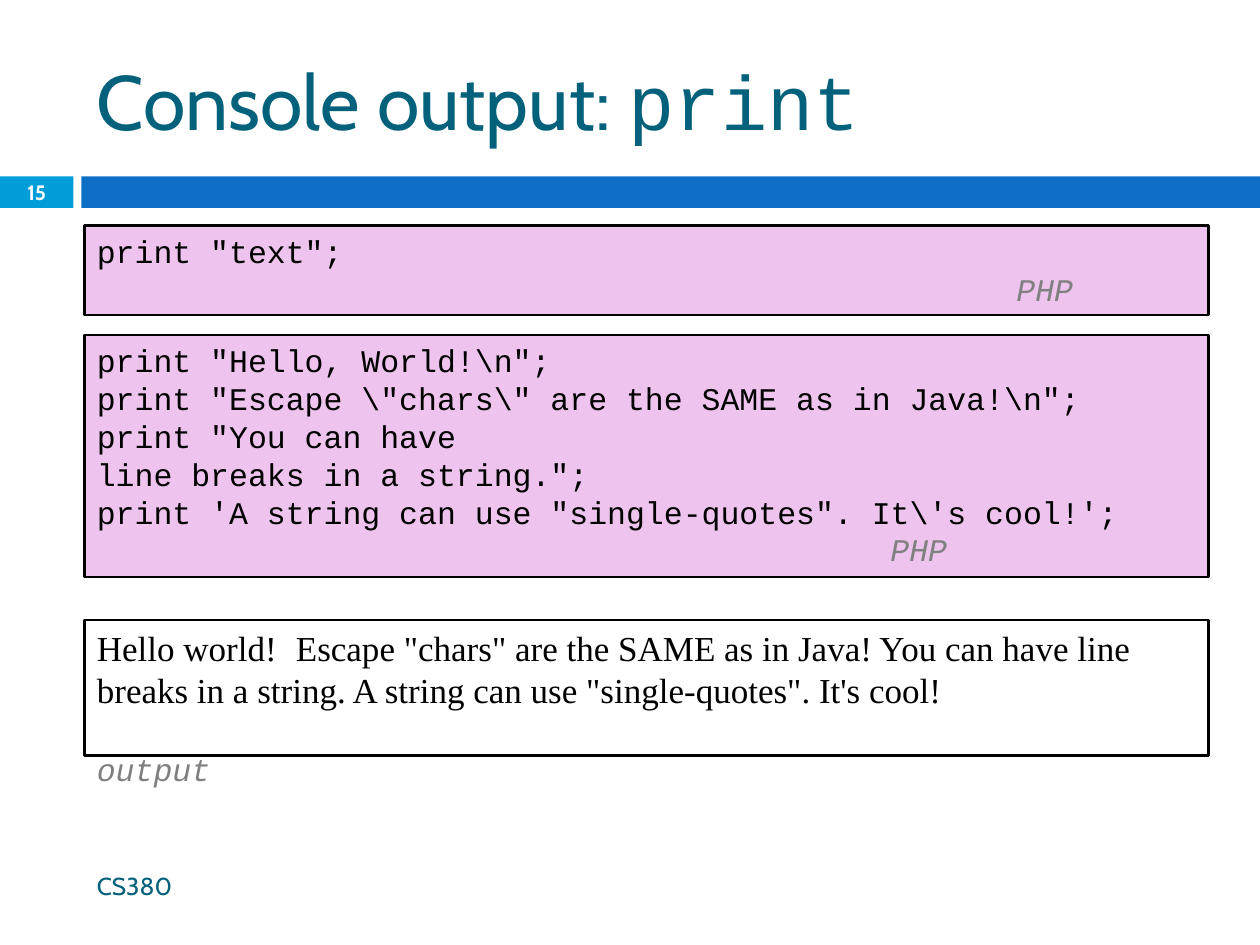
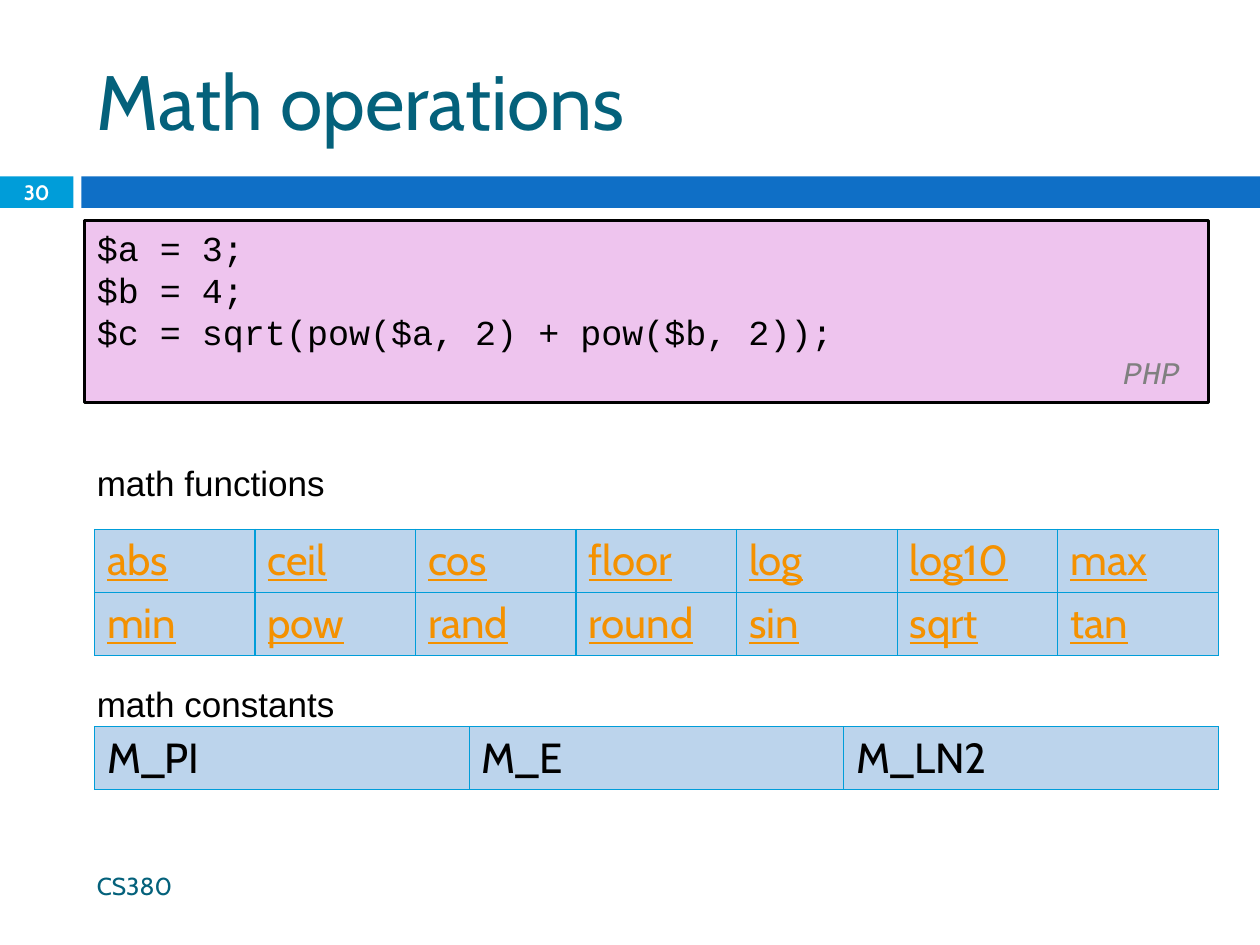
from lxml import etree
from pptx import Presentation
from pptx.dml.color import RGBColor
from pptx.enum import shapes, text
from pptx.oxml import ns
from pptx.util import Pt

# Shared look
TEAL = RGBColor(0x04, 0x61, 0x7B)
CYAN = RGBColor(0x00, 0x9D, 0xD9)
BLUE = RGBColor(0x0F, 0x6F, 0xC6)
PINK = RGBColor(0xEE, 0xC4, 0xEE)
PALE_BLUE = RGBColor(0xBC, 0xD4, 0xEC)
ORANGE = RGBColor(0xF4, 0x91, 0x00)
GRAY = RGBColor(0x80, 0x80, 0x80)
BLACK = RGBColor(0, 0, 0)
WHITE = RGBColor(255, 255, 255)
HEADING, CODE, SERIF, SANS = "Cabin", "Courier New", "Times New Roman", "Arial"
LEFT, WIDTH = 48.25, 642.25
TABLE_LEFT, ROW_HEIGHT = 54, 36

# Content: panels are (top, height, fill, font, size, lines, tag, tag indent, gap above tag);
# a line is a string or a list of (words, font, size)
PRINT_TITLE = [("Console output: ", HEADING), ("print", CODE)]
PRINT_PANELS = [
    (191.5, 138.25, PINK, CODE, 18, [
        r'print "Hello, World!\n";',
        r'print "Escape \"chars\" are the SAME as in Java!\n";',
        'print "You can have',
        'line breaks in a string.";',
        r"""print 'A string can use "single-quotes". It\'s cool!';""",
    ], "PHP", 453.5, 0),
    (354.25, 77.5, WHITE, SERIF, 20, [[
        ("Hello world!", SERIF, 20),
        (" ", CODE, 18),
        ('Escape "chars" are the SAME as in Java! You can have line breaks '
         'in a string. A string can use "single-quotes". It\'s cool!', SERIF, 20),
    ]], "output", 0, 23),
    (129, 51, PINK, CODE, 18, ['print "text";'], "PHP", 525.5, 0),
]
MATH_TITLE = [("Math operations", HEADING)]
MATH_PANELS = [
    (126, 104, PINK, CODE, 20, [
        "$a = 3;",
        "$b = 4;",
        "$c = sqrt(pow($a, 2) + pow($b, 2));",
    ], "PHP", 586.5, 0),
]
# Tables: (caption, caption top, table top, rows, text colour, underlined)
MATH_TABLES = [
    ("math functions", 260, 302.5, [
        ["abs", "ceil", "cos", "floor", "log", "log10", "max"],
        ["min", "pow", "rand", "round", "sin", "sqrt", "tan"],
    ], ORANGE, True),
    ("math constants", 386.5, 415.25, [["M_PI", "M_E", "M_LN2"]], BLACK, False),
]


def style(span, font, size, color, bold=False, italic=False, underline=False):
    span.font.name = font
    span.font.size = Pt(size)
    span.font.color.rgb = color
    span.font.bold = bold
    span.font.italic = italic
    span.font.underline = underline


def add_span(para, words, font, size, color, **looks):
    span = para.add_run()
    span.text = words
    style(span, font, size, color, **looks)


def add_rect(page, left, top, width, height, fill):
    box = page.shapes.add_shape(shapes.MSO_SHAPE.RECTANGLE,
                                Pt(left), Pt(top), Pt(width), Pt(height))
    box.shadow.inherit = False
    box.fill.solid()
    box.fill.fore_color.rgb = fill
    box.line.fill.background()
    return box


def add_label(page, left, top, width, height, spans, size, color, bold=False):
    box = page.shapes.add_textbox(Pt(left), Pt(top), Pt(width), Pt(height))
    frame = box.text_frame
    frame.word_wrap = True
    frame.vertical_anchor = text.MSO_ANCHOR.MIDDLE
    for words, font in spans:
        add_span(frame.paragraphs[0], words, font, size, color, bold=bold)
    return frame


def add_page(deck, title, number):
    page = deck.slides.add_slide(deck.slide_layouts[6])
    # Band with the page number, title, footer
    add_rect(page, 0, 100.8, 42, 18, CYAN)
    add_rect(page, 46.5, 100.8, 673.5, 18, BLUE)
    add_label(page, LEFT, 18, WIDTH, 78, title, 44, TEAL)
    add_label(page, LEFT, 492, 427, 28.75, [("CS380", HEADING)], 14, TEAL)
    frame = add_label(page, 0, 100, 42, 19.5, [(number, HEADING)], 11.9, WHITE, bold=True)
    frame.margin_left = frame.margin_right = frame.margin_top = frame.margin_bottom = 0
    frame.paragraphs[0].alignment = text.PP_ALIGN.CENTER
    return page


def add_panel(page, top, height, fill, font, size, lines, tag, indent, gap):
    box = add_rect(page, LEFT, top, WIDTH, height, fill)
    box.line.color.rgb = BLACK
    box.line.width = Pt(1.5)
    frame = box.text_frame
    frame.word_wrap = True
    frame.vertical_anchor = text.MSO_ANCHOR.TOP
    for i, line in enumerate(lines):
        para = frame.add_paragraph() if i else frame.paragraphs[0]
        para.alignment = text.PP_ALIGN.LEFT
        para.line_spacing = Pt(size * 1.2)
        spans = [(line, font, size)] if isinstance(line, str) else line
        for words, face, points in spans:
            add_span(para, words, face, points, BLACK)
    # Language tag under the lines
    para = frame.add_paragraph()
    para.alignment = text.PP_ALIGN.LEFT
    para.line_spacing = Pt(21.5)
    para.space_before = Pt(gap)
    properties = para._p.get_or_add_pPr()
    properties.set("marL", str(Pt(indent)))
    properties.set("indent", "0")
    add_span(para, tag, CODE, 18, GRAY, italic=True)


def add_borders(cell):
    properties = cell._tc.get_or_add_tcPr()
    for side in ("L", "R", "T", "B"):
        edge = etree.SubElement(properties, ns.qn("a:ln" + side), w=str(Pt(0.79)))
        paint = etree.SubElement(edge, ns.qn("a:solidFill"))
        etree.SubElement(paint, ns.qn("a:srgbClr"), val=str(CYAN))


def add_grid(page, caption, caption_top, top, rows, color, underline):
    add_label(page, LEFT, caption_top, 160, 31.5, [(caption, SANS)], 20, BLACK)
    table = page.shapes.add_table(len(rows), len(rows[0]), Pt(TABLE_LEFT), Pt(top),
                                  Pt(WIDTH), Pt(ROW_HEIGHT * len(rows))).table
    table.first_row = table.horz_banding = False
    for column in table.columns:
        column.width = Pt(WIDTH / len(rows[0]))
    for r, row in enumerate(rows):
        table.rows[r].height = Pt(ROW_HEIGHT)
        for c, words in enumerate(row):
            cell = table.cell(r, c)
            cell.text_frame.text = words
            style(cell.text_frame.paragraphs[0].runs[0], HEADING, 24, color,
                  underline=underline)
            cell.vertical_anchor = text.MSO_ANCHOR.MIDDLE
            cell.margin_top = cell.margin_bottom = 0
            add_borders(cell)
            cell.fill.solid()
            cell.fill.fore_color.rgb = PALE_BLUE


def main():
    deck = Presentation()
    deck.slide_width, deck.slide_height = Pt(720), Pt(540)
    for title, number, panels, tables in (
            (PRINT_TITLE, "15", PRINT_PANELS, []),
            (MATH_TITLE, "30", MATH_PANELS, MATH_TABLES)):
        page = add_page(deck, title, number)
        for panel in panels:
            add_panel(page, *panel)
        for grid in tables:
            add_grid(page, *grid)
    deck.save("out.pptx")


if __name__ == "__main__":
    main()
